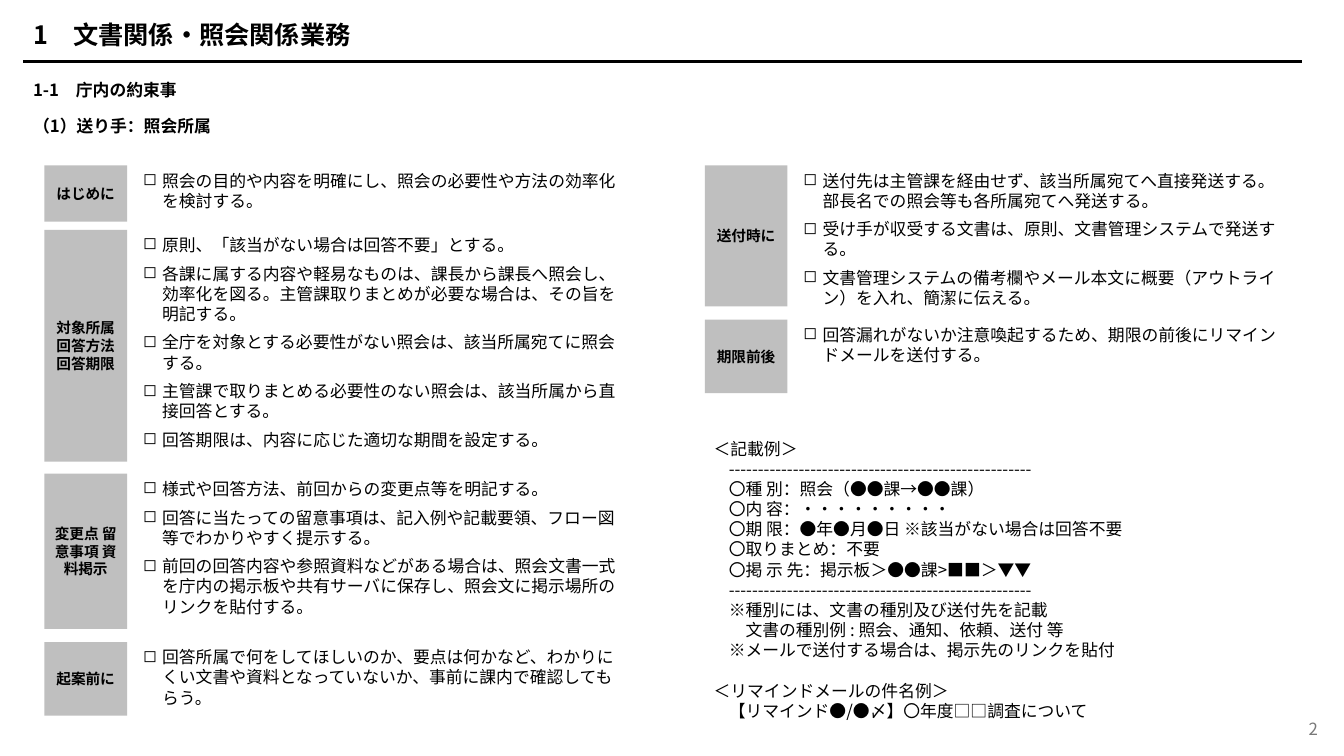
from dataclasses import dataclass

from lxml import etree
from pptx import Presentation
from pptx.dml.color import RGBColor
from pptx.enum.shapes import MSO_CONNECTOR, MSO_SHAPE
from pptx.enum.text import MSO_ANCHOR, PP_ALIGN
from pptx.oxml.ns import qn
from pptx.util import Inches, Pt

LEFT, MID, RIGHT = PP_ALIGN.LEFT, PP_ALIGN.CENTER, PP_ALIGN.RIGHT
TOP, CENTER = MSO_ANCHOR.TOP, MSO_ANCHOR.MIDDLE
RECT, LINE = MSO_SHAPE.RECTANGLE, MSO_CONNECTOR.STRAIGHT


@dataclass(frozen=True)
class Theme:
    font: str = "Noto Sans CJK JP"
    ink: str = "000000"
    pale: str = "797979"
    fill: str = "BFBFBF"
    title: float = 18
    body: float = 12
    tag: float = 10.5


THEME = Theme()
WIDE, HIGH = 13.33, 7.5
TAG, GAP, ITEM = 0.82, 0.06, 4.91  # columns of a step list
HANG, STEP = 0.19, 0.15  # bullet hang and first-line indent
RULE = "-" * 52

# Each step: top, height, tag, items
FIRST = [
    (1.64, 0.56, "はじめに", [
        "照会の目的や内容を明確にし、照会の必要性や方法の効率化を検討する。",
    ]),
    (2.28, 2.3, "対象所属 回答方法 回答期限", [
        "原則、「該当がない場合は回答不要」とする。",
        "各課に属する内容や軽易なものは、課長から課長へ照会し、効率化を図る。"
        "主管課取りまとめが必要な場合は、その旨を明記する。",
        "全庁を対象とする必要性がない照会は、該当所属宛てに照会する。",
        "主管課で取りまとめる必要性のない照会は、該当所属から直接回答とする。",
        "回答期限は、内容に応じた適切な期間を設定する。",
    ]),
    (4.7, 1.54, "変更点 留意事項 資料掲示", [
        "様式や回答方法、前回からの変更点等を明記する。",
        "回答に当たっての留意事項は、記入例や記載要領、フロー図等でわかりやすく提示する。",
        "前回の回答内容や参照資料などがある場合は、照会文書一式を庁内の掲示板や"
        "共有サーバに保存し、照会文に掲示場所のリンクを貼付する。",
    ]),
    (6.37, 0.73, "起案前に", [
        "回答所属で何をしてほしいのか、要点は何かなど、わかりにくい文書や資料と"
        "なっていないか、事前に課内で確認してもらう。",
    ]),
]
SECOND = [
    (1.64, 1.4, "送付時に", [
        "送付先は主管課を経由せず、該当所属宛てへ直接発送する。"
        "部長名での照会等も各所属宛てへ発送する。",
        "受け手が収受する文書は、原則、文書管理システムで発送する。",
        "文書管理システムの備考欄やメール本文に概要（アウトライン）を入れ、簡潔に伝える。",
    ]),
    (3.17, 0.73, "期限前後", [
        "回答漏れがないか注意喚起するため、期限の前後にリマインドメールを送付する。",
    ]),
]
# Each line: first-line indent, text
SAMPLE = [
    (0, "＜記載例＞"),
    (STEP, RULE),
    (STEP, "〇種 別：照会（●●課→●●課）"),
    (STEP, "〇内 容：・・・・・・・・・"),
    (STEP, "〇期 限：●年●月●日 ※該当がない場合は回答不要"),
    (STEP, "〇取りまとめ：不要"),
    (STEP, "〇掲 示 先：掲示板＞●●課>■■＞▼▼"),
    (STEP, RULE),
    (STEP, "※種別には、文書の種別及び送付先を記載"),
    (STEP + THEME.body / 72, "文書の種別例 : 照会、通知、依頼、送付 等"),
    (STEP, "※メールで送付する場合は、掲示先のリンクを貼付"),
]
MAIL = [
    (0, "＜リマインドメールの件名例＞"),
    (STEP, "【リマインド●/●〆】〇年度□□調査について"),
]


def style(para, size, color=THEME.ink, bold=False, align=LEFT):
    """Set the font of a paragraph, East Asian face included."""
    para.alignment = align
    font = para.font
    font.size, font.bold, font.name = Pt(size), bold, THEME.font
    font.color.rgb = RGBColor.from_string(color)
    base = para._p.pPr.find(qn("a:defRPr"))
    etree.SubElement(base, qn("a:ea")).set("typeface", THEME.font)
    return base


def indent(para, first, left=0):
    props = para._p.get_or_add_pPr()
    props.set("marL", str(Inches(left)))
    props.set("indent", str(Inches(first)))


def frame(slide, box, anchor=TOP):
    """Add an empty wrapping text box."""
    text = slide.shapes.add_textbox(*map(Inches, box)).text_frame
    text.word_wrap, text.vertical_anchor = True, anchor
    return text


def label(slide, box, words, size, color=THEME.ink, bold=True,
          align=LEFT, anchor=TOP):
    """Add a single line of text."""
    para = frame(slide, box, anchor).paragraphs[0]
    para.text = words
    style(para, size, color, bold, align)


def paras(text, lines):
    """Yield one filled paragraph for each line."""
    for num, line in enumerate(lines):
        para = text.add_paragraph() if num else text.paragraphs[0]
        para.text = line
        yield para


def head(slide, box):
    """Title, rule and two headings."""
    left, top, width, _ = box
    label(slide, (left, top, width, 0.4), "1　文書関係・照会関係業務", THEME.title)
    level = Inches(top + 0.47)
    rule = slide.shapes.add_connector(
        LINE, Inches(left), level, Inches(left + 12.68), level)
    rule.line.width = Pt(1.5)
    rule.line.color.rgb = RGBColor.from_string(THEME.ink)
    etree.SubElement(rule._element.spPr, qn("a:effectLst"))
    for down, words in ((0.6, "1-1　庁内の約束事"), (0.96, "（1）送り手：照会所属")):
        label(slide, (left, top + down, width, 0.3), words, THEME.body)


def step(slide, box, name, items):
    """Grey tag with its bulleted items to the right."""
    left, top, width, height = box
    tag = slide.shapes.add_shape(RECT, *map(Inches, (left, top, TAG, height)))
    tag.shadow.inherit = False
    tag.fill.solid()
    tag.fill.fore_color.rgb = RGBColor.from_string(THEME.fill)
    tag.line.fill.background()
    text = tag.text_frame
    text.word_wrap, text.vertical_anchor = True, CENTER
    text.text = name
    style(text.paragraphs[0], THEME.tag, bold=True, align=MID)

    shift = TAG + GAP
    text = frame(slide, (left + shift, top, width - shift, height))
    for para in paras(text, items):
        para.space_after = Pt(6)
        indent(para, -HANG, HANG)
        mark = etree.Element(qn("a:buChar"))
        mark.set("char", "◻")
        style(para, THEME.body).addprevious(mark)


def steps(slide, left, rows):
    for top, height, name, items in rows:
        step(slide, (left, top, TAG + GAP + ITEM, height), name, items)


def sample(slide, box):
    """Sample notice, then a sample mail subject."""
    lines = SAMPLE + MAIL
    text = frame(slide, box)
    for num, para in enumerate(paras(text, [words for _, words in lines])):
        indent(para, lines[num][0])
        if num == len(SAMPLE):
            para.space_before = Pt(14.5)
        style(para, THEME.body)


def main():
    deck = Presentation()
    deck.slide_width, deck.slide_height = Inches(WIDE), Inches(HIGH)
    slide = deck.slides.add_slide(deck.slide_layouts[6])
    head(slide, (0.23, 0.14, 12.85, 1.26))
    steps(slide, 0.44, FIRST)
    steps(slide, 6.99, SECOND)
    sample(slide, (6.98, 4.3, 5.8, 2.63))
    # Page number
    label(slide, (10.17, 7.03, 3, 0.4), "2", THEME.body, THEME.pale,
          False, RIGHT, CENTER)
    deck.save("out.pptx")


if __name__ == "__main__":
    main()
